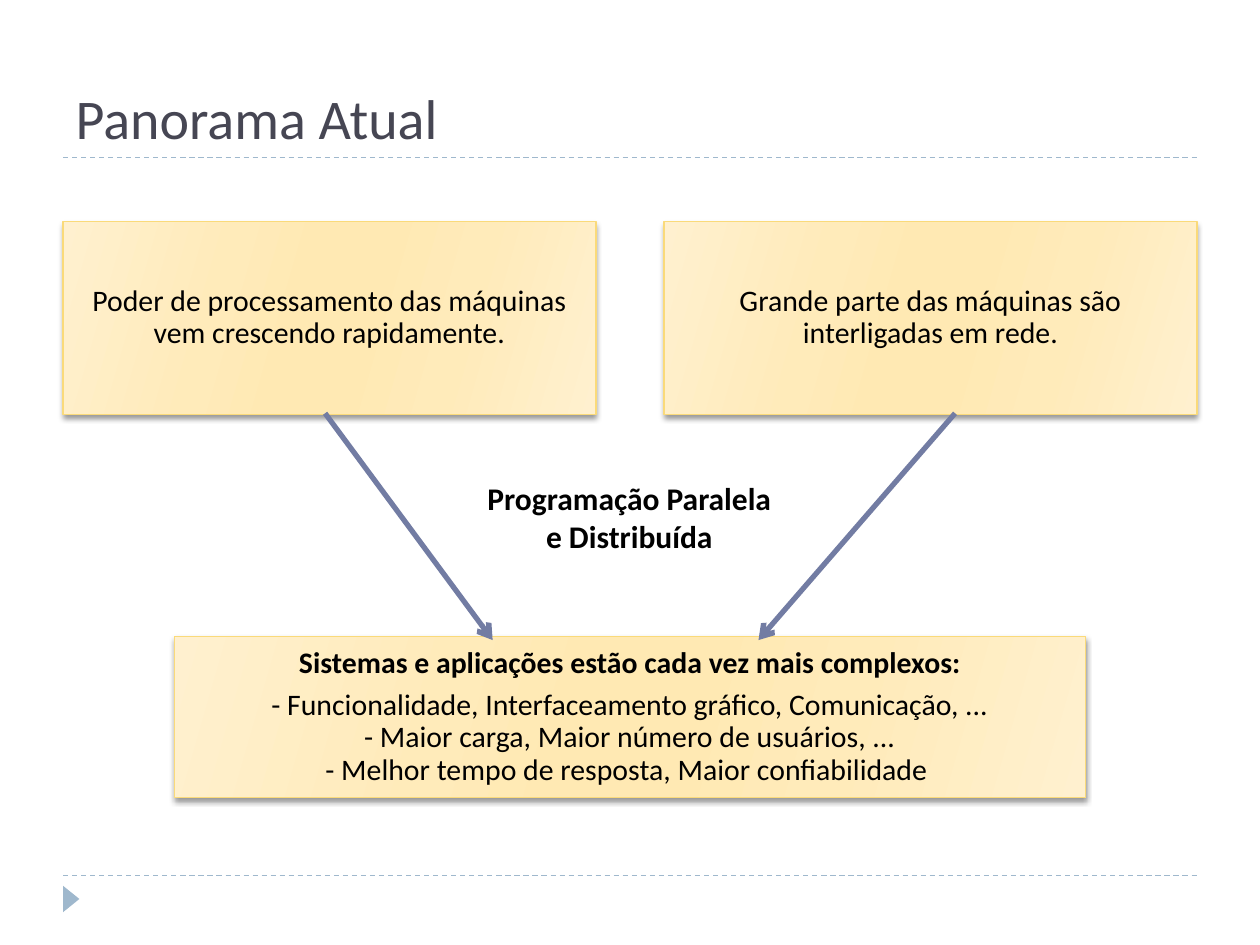
from lxml import etree
from pptx import Presentation
from pptx.dml.color import RGBColor
from pptx.enum.dml import MSO_LINE
from pptx.enum.shapes import MSO_CONNECTOR, MSO_SHAPE
from pptx.enum.text import MSO_ANCHOR, MSO_AUTO_SIZE, PP_ALIGN
from pptx.oxml import parse_xml
from pptx.oxml.ns import qn
from pptx.util import Inches, Pt

CENTER, LEFT = PP_ALIGN.CENTER, PP_ALIGN.LEFT
MIDDLE, BOTTOM = MSO_ANCHOR.MIDDLE, MSO_ANCHOR.BOTTOM
STRAIGHT, DASH = MSO_CONNECTOR.STRAIGHT, MSO_LINE.DASH
FONT = "Calibri"
INK = RGBColor(0x46, 0x46, 0x53)
BLACK = RGBColor(0, 0, 0)
PALE_BLUE = RGBColor(0x9F, 0xB8, 0xCD)
INDIGO = RGBColor(0x72, 0x7C, 0xA3)
GOLD = RGBColor(0xFA, 0xDA, 0x7A)
CREAM = RGBColor(0xFF, 0xF0, 0xCF)
SAND = RGBColor(0xFF, 0xEB, 0xBA)
HONEY = RGBColor(0xFF, 0xE9, 0xB3)
STOPS = [(0, CREAM), (30, SAND), (45, HONEY), (55, HONEY), (73, SAND), (100, CREAM)]
NS = 'xmlns:a="http://schemas.openxmlformats.org/drawingml/2006/main"'

WIDTH, HEIGHT, MARGIN = 10, 7.5, 0.5
TITLE = "Panorama Atual"
CARD_W, CARD_H, CARD_TOP = 4.23, 1.53, 1.76
CAUSES = [
    "Poder de processamento das máquinas vem crescendo rapidamente.",
    "Grande parte das máquinas são interligadas em rede.",
]
RESULT_W, RESULT_H, RESULT_TOP = 7.23, 1.28, 5.05
RESULT = [
    ("Sistemas e aplicações estão cada vez mais complexos:", True),
    ("- Funcionalidade, Interfaceamento gráfico, Comunicação, ...\n"
     "- Maior carga, Maior número de usuários, ...\n"
     "- Melhor tempo de resposta, Maior confiabilidade ", False),
]
LABEL = [("Programação Paralela", True), ("e Distribuída", True)]
ARROWS = [(2.58, 3.91), (7.58, 6.02)]
RULES = [6.95, 1.25]


def write(tf, paragraphs, size, color=BLACK, align=CENTER):
    for i, (text, bold) in enumerate(paragraphs):
        p = tf.paragraphs[0] if i == 0 else tf.add_paragraph()
        p.alignment = align
        for j, line in enumerate(text.split("\n")):
            if j:
                p.add_line_break()
            r = p.add_run()
            r.text = line
            r.font.name, r.font.size, r.font.bold = FONT, Pt(size), bold
            r.font.color.rgb = color


def add_line(slide, x1, y1, x2, y2, color, width):
    c = slide.shapes.add_connector(STRAIGHT, *map(Inches, (x1, y1, x2, y2)))
    c.line.color.rgb = color
    c.line.width = Pt(width)
    etree.SubElement(c._element.spPr, qn("a:effectLst"))
    return c


def add_card(slide, left, top, width, height, paragraphs):
    s = slide.shapes.add_shape(MSO_SHAPE.RECTANGLE, *map(Inches, (left, top, width, height)))
    s.line.color.rgb = GOLD
    s.line.width = Pt(0.75)
    s.fill.gradient()
    stops = "".join(
        f'<a:gs pos="{pos * 1000}"><a:srgbClr val="{color}"/></a:gs>' for pos, color in STOPS)
    spPr = s._element.spPr
    spPr.replace(spPr.find(qn("a:gradFill")), parse_xml(
        f'<a:gradFill {NS} rotWithShape="1"><a:gsLst>{stops}</a:gsLst>'
        '<a:lin ang="960000" scaled="0"/></a:gradFill>'))
    s.shadow.inherit = False
    spPr.find(qn("a:effectLst")).append(parse_xml(
        f'<a:outerShdw {NS} blurRad="{Pt(3)}" dist="{Pt(2)}" dir="5400000" rotWithShape="0">'
        '<a:srgbClr val="000000"><a:alpha val="40000"/></a:srgbClr></a:outerShdw>'))
    tf = s.text_frame
    tf.word_wrap = True
    tf.vertical_anchor = MIDDLE
    tf.margin_left = tf.margin_right = tf.margin_top = tf.margin_bottom = Inches(0.07)
    write(tf, paragraphs, 17)
    for p in tf.paragraphs:
        p.line_spacing = 0.9
        p.space_after = Pt(6)


def main():
    prs = Presentation()
    prs.slide_width, prs.slide_height = Inches(WIDTH), Inches(HEIGHT)
    slide = prs.slides.add_slide(prs.slide_layouts[5])

    for y in RULES:
        add_line(slide, MARGIN, y, WIDTH - MARGIN, y, PALE_BLUE, 0.75).line.dash_style = DASH
    marker = slide.shapes.add_shape(
        MSO_SHAPE.ISOSCELES_TRIANGLE, *map(Inches, (0.46, 7.07, 0.21, 0.13)))
    marker.rotation = 90
    marker.shadow.inherit = False
    marker.fill.solid()
    marker.fill.fore_color.rgb = PALE_BLUE
    marker.line.fill.background()

    title = slide.shapes.title
    title.left, title.top, title.width, title.height = map(
        Inches, (MARGIN, 0.17, WIDTH - 2 * MARGIN, 1.08))
    title.text_frame.vertical_anchor = BOTTOM
    write(title.text_frame, [(TITLE, False)], 32, INK, LEFT)

    step = WIDTH - 2 * MARGIN - CARD_W
    for i, text in enumerate(CAUSES):
        add_card(slide, MARGIN + i * step, CARD_TOP, CARD_W, CARD_H, [(text, False)])
    add_card(slide, (WIDTH - RESULT_W) / 2, RESULT_TOP, RESULT_W, RESULT_H, RESULT)

    for start, end in ARROWS:
        arrow = add_line(slide, start, 3.28, end, 5.08, INDIGO, 3)
        etree.SubElement(arrow.line._get_or_add_ln(), qn("a:tailEnd"), type="arrow")

    label = slide.shapes.add_textbox(*map(Inches, (3.59, 3.75, 2.81, 0.71)))
    label.text_frame.word_wrap = True
    label.text_frame.auto_size = MSO_AUTO_SIZE.SHAPE_TO_FIT_TEXT
    write(label.text_frame, LABEL, 18)

    prs.save("out.pptx")


if __name__ == "__main__":
    main()
